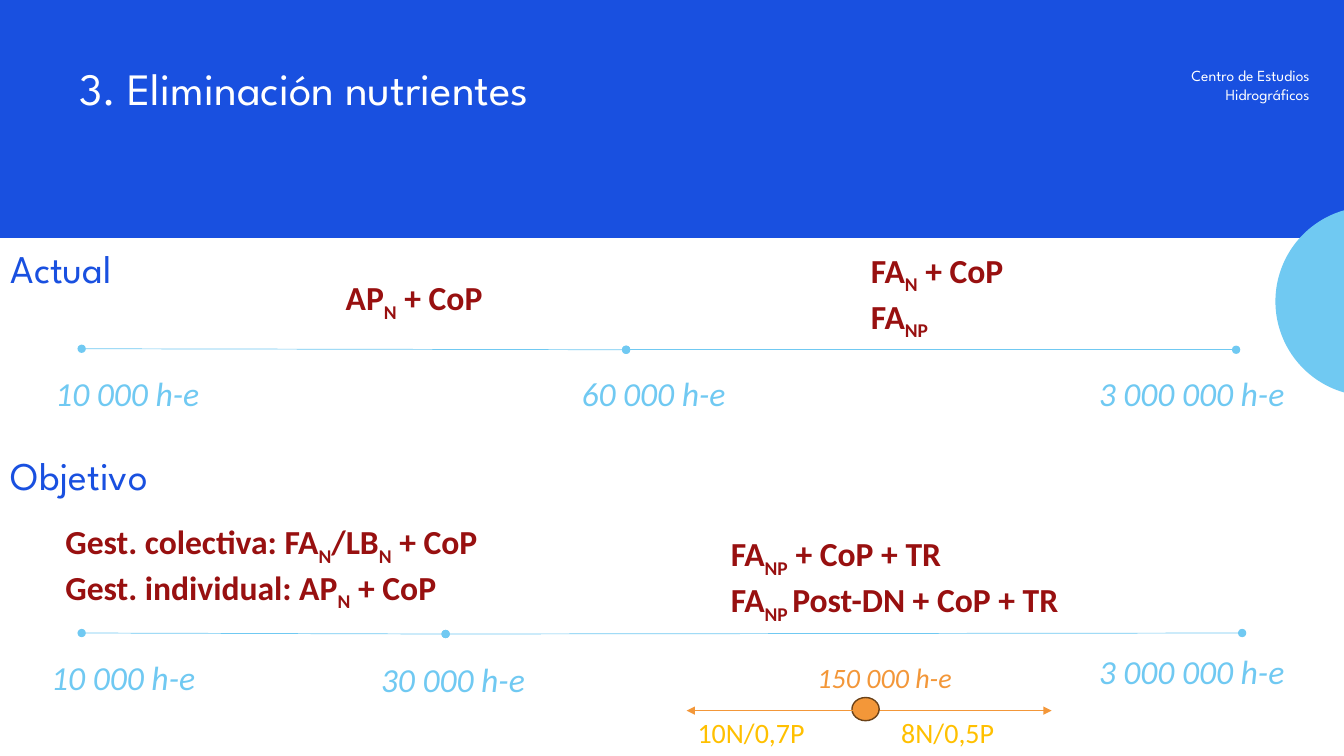
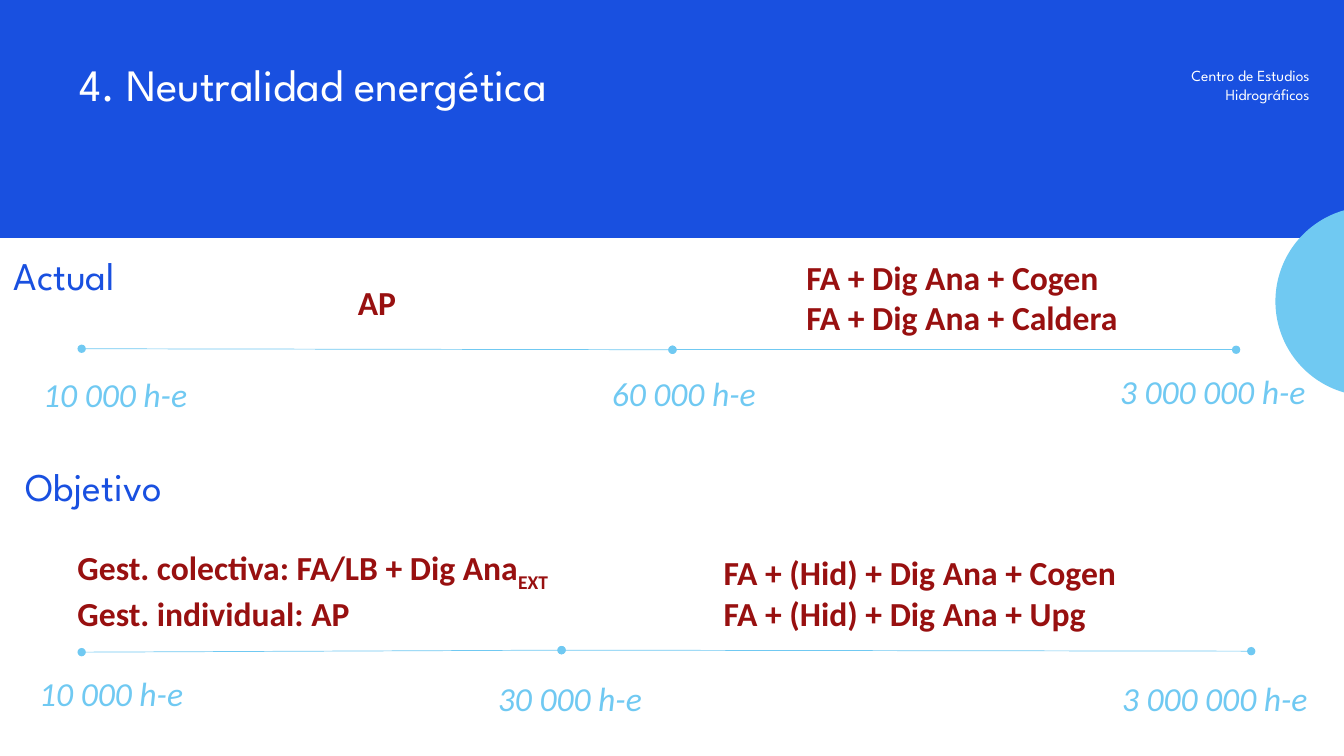
from lxml.etree import SubElement
from pptx import Presentation
from pptx.dml.color import RGBColor
from pptx.enum.shapes import MSO_CONNECTOR, MSO_SHAPE
from pptx.enum.text import MSO_AUTO_SIZE, PP_ALIGN
from pptx.oxml.ns import qn
from pptx.util import Inches, Pt

WHITE = RGBColor(0xFF, 0xFF, 0xFF)
BLUE = RGBColor(0x19, 0x50, 0xE0)
SKY = RGBColor(0x70, 0xC9, 0xF2)
RED = RGBColor(0x98, 0x10, 0x10)
ORANGE = RGBColor(0xF3, 0x97, 0x39)
BROWN = RGBColor(0x6B, 0x42, 0x19)
YELLOW = RGBColor(0xFF, 0xC0, 0x00)

TITLE = {"name": "League Spartan", "size": Pt(32)}
HEADING = {"name": "League Spartan", "size": Pt(28)}
INSTITUTE = {"name": "League Spartan", "size": Pt(11)}
POPULATION = {"name": "Calibri", "size": Pt(24), "italic": True}
TREATMENT = {"name": "Calibri", "size": Pt(24), "bold": True}
THRESHOLD = {"name": "Calibri", "size": Pt(20), "italic": True}
LIMIT = {"name": "Calibri", "size": Pt(20)}


class Deck:
    """Holds the deck style and draws on the current slide."""

    def __init__(self):
        self.presentation = Presentation()
        self.presentation.slide_width = Inches(13.33)
        self.presentation.slide_height = Inches(7.5)
        self.slide = None

    def add_slide(self, title, title_top):
        self.slide = self.presentation.slides.add_slide(self.presentation.slide_layouts[6])
        self.shape(MSO_SHAPE.RECTANGLE, 0, 0, 13.33, 2.36, BLUE)
        self.shape(MSO_SHAPE.CHORD, 12.65, 2.05, 1.88, 1.88, SKY).rotation = 22.3
        self.text(title, 0.69, title_top, 11.24, 1.31, TITLE, WHITE, wrap=True)
        institute = self.text("Centro de Estudios Hidrográficos", 11.48, 0.61, 1.61, 1.33,
                              INSTITUTE, WHITE, wrap=True)
        institute.text_frame.paragraphs[0].alignment = PP_ALIGN.RIGHT

    def shape(self, kind, left, top, width, height, fill, outline=None):
        shape = self.slide.shapes.add_shape(
            kind, Inches(left), Inches(top), Inches(width), Inches(height))
        shape.shadow.inherit = False
        shape.fill.solid()
        shape.fill.fore_color.rgb = fill
        if outline is None:
            shape.line.fill.background()
        else:
            shape.line.color.rgb = outline
            shape.line.width = Pt(1)
        return shape

    def text(self, text, left, top, width, height, style, color, wrap=False):
        box = self.slide.shapes.add_textbox(
            Inches(left), Inches(top), Inches(width), Inches(height))
        frame = box.text_frame
        frame.word_wrap = wrap
        frame.auto_size = MSO_AUTO_SIZE.NONE if wrap else MSO_AUTO_SIZE.SHAPE_TO_FIT_TEXT
        for index, line in enumerate(text.split("\n")):
            paragraph = frame.add_paragraph() if index else frame.paragraphs[0]
            for position, part in enumerate(line.split("_")):
                if part:
                    self.run(paragraph, part, style, color, subscript=position % 2 == 1)
        return box

    def run(self, paragraph, text, style, color, subscript):
        run = paragraph.add_run()
        run.text = text
        for name, value in style.items():
            setattr(run.font, name, value)
        run.font.color.rgb = color
        if subscript:
            run.font._element.set("baseline", "-25000")

    def heading(self, text, left, top):
        box = self.text(text, left, top, 2.5, 0.6, HEADING, BLUE, wrap=True)
        box.text_frame.paragraphs[0].line_spacing = 0.9

    def population(self, text, left, top):
        width = 2.06 if text.startswith("3 000") else 1.64
        self.text(text, left, top, width, 0.5, POPULATION, SKY)

    def treatment(self, text, left, top, width):
        height = 0.91 if "\n" in text else 0.5
        self.text(text, left, top, width, height, TREATMENT, RED)

    def line(self, start, end, color, **arrowheads):
        points = [Inches(value) for value in (*start, *end)]
        connector = self.slide.shapes.add_connector(MSO_CONNECTOR.STRAIGHT, *points)
        connector.line.color.rgb = color
        connector.line.width = Pt(0.5)
        properties = connector._element.spPr
        for name, kind in arrowheads.items():
            SubElement(properties.find(qn("a:ln")), qn(f"a:{name}"), type=kind)
        SubElement(properties, qn("a:effectLst"))

    def timeline(self, *points):
        for start, end in zip(points, points[1:]):
            self.line(start, end, SKY, headEnd="oval", tailEnd="oval")


def add_nutrients(deck):
    deck.add_slide("3. Eliminación nutrientes", 0.55)
    deck.heading("Actual", 0.01, 2.43)
    deck.timeline((0.81, 3.46), (6.21, 3.47), (12.26, 3.47))
    deck.treatment("AP_N_ + CoP", 3.33, 2.7, 1.59)
    deck.treatment("FA_N_ + CoP\nFA_NP_", 8.54, 2.43, 1.55)
    deck.population("10 000 h-e", 0.45, 3.65)
    deck.population("60 000 h-e", 5.67, 3.65)
    deck.population("3 000 000 h-e", 10.8, 3.65)

    deck.heading("Objetivo", 0.01, 4.48)
    deck.timeline((0.81, 6.28), (4.42, 6.29), (12.32, 6.28))
    deck.treatment("Gest. colectiva: FA_N_/LB_N_ + CoP\nGest. individual: AP_N_ + CoP",
                   0.55, 5.12, 4.37)
    deck.treatment("FA_NP_ + CoP + TR\nFA_NP _Post-DN + CoP + TR", 7.15, 5.24, 3.53)
    deck.population("10 000 h-e", 0.41, 6.47)
    deck.population("30 000 h-e", 3.68, 6.49)
    deck.population("3 000 000 h-e", 10.8, 6.41)

    deck.line((8.53, 7.05), (10.43, 7.05), ORANGE, tailEnd="triangle")
    deck.shape(MSO_SHAPE.OVAL, 8.45, 6.92, 0.27, 0.23, ORANGE, BROWN)
    deck.line((8.68, 7.05), (6.81, 7.05), ORANGE, tailEnd="triangle")
    deck.text("150 000 h-e", 8.01, 6.5, 1.54, 0.44, THRESHOLD, ORANGE)
    deck.text("10N/0,7P", 6.82, 7.05, 1.27, 0.44, LIMIT, YELLOW)
    deck.text("8N/0,5P", 8.84, 7.05, 1.13, 0.44, LIMIT, YELLOW)


def add_energy(deck):
    deck.add_slide("4. Neutralidad energética", 0.51)
    deck.heading("Actual", 0.04, 2.5)
    deck.timeline((0.81, 3.46), (6.67, 3.47), (12.26, 3.47))
    deck.treatment("AP", 3.45, 2.75, 0.58)
    deck.treatment("FA + Dig Ana + Cogen\nFA + Dig Ana + Caldera", 7.9, 2.5, 3.32)
    deck.population("10 000 h-e", 0.33, 3.66)
    deck.population("60 000 h-e", 5.97, 3.65)
    deck.population("3 000 000 h-e", 11.01, 3.63)

    deck.heading("Objetivo", 0.15, 4.59)
    deck.timeline((0.81, 6.47), (5.57, 6.45), (12.41, 6.46))
    deck.treatment("Gest. colectiva: FA/LB + Dig Ana_EXT_\nGest. individual: AP",
                   0.67, 5.38, 5.03)
    deck.treatment("FA + (Hid) + Dig Ana + Cogen\nFA + (Hid) + Dig Ana + Upg",
                   7.08, 5.43, 4.13)
    deck.population("10 000 h-e", 0.29, 6.63)
    deck.population("30 000 h-e", 4.84, 6.68)
    deck.population("3 000 000 h-e", 11.03, 6.68)


def main():
    deck = Deck()
    add_nutrients(deck)
    add_energy(deck)
    deck.presentation.save("out.pptx")


if __name__ == "__main__":
    main()
